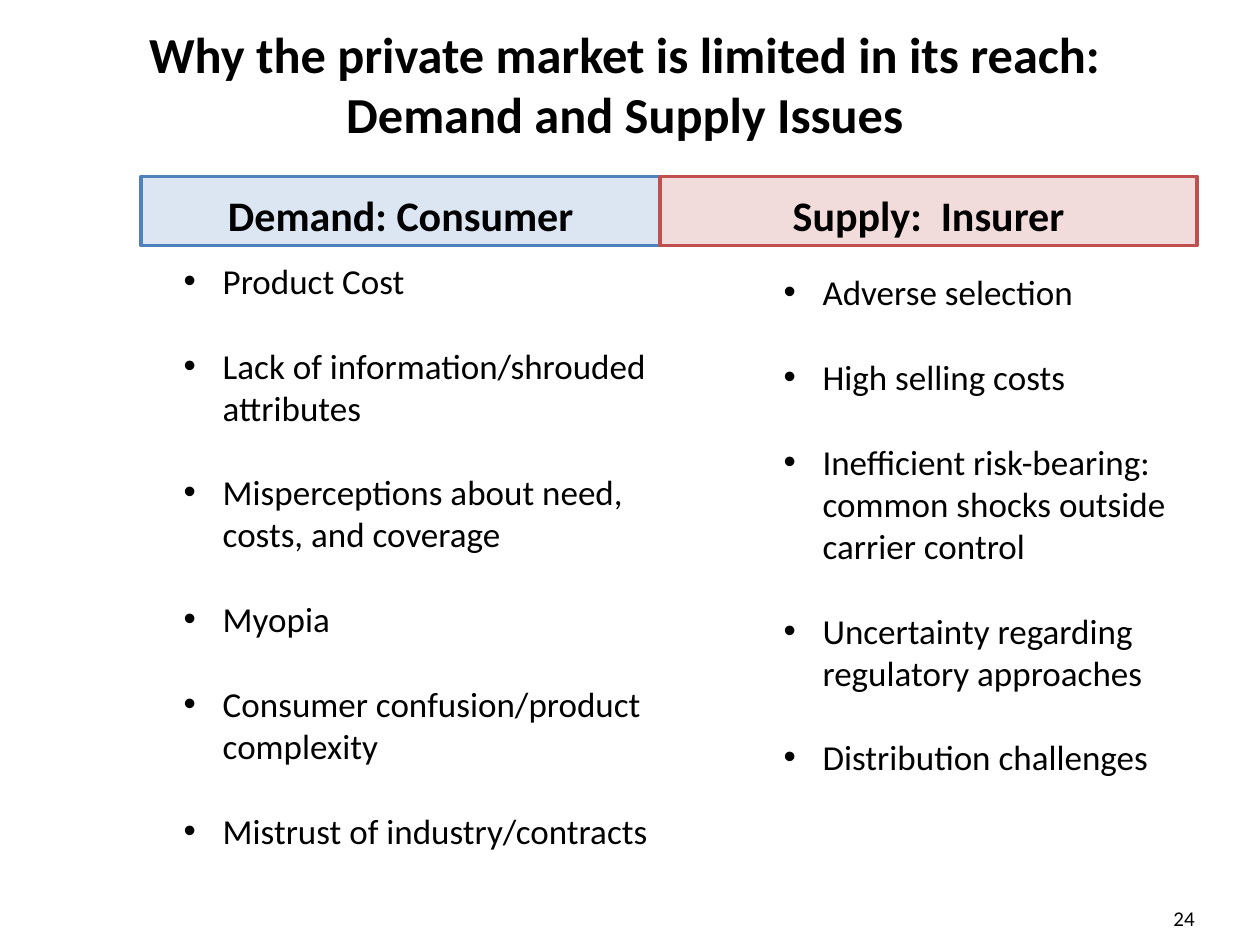
"""Build a slide comparing demand and supply limits of the private insurance market."""
from lxml.etree import SubElement
from pptx import Presentation
from pptx.dml.color import RGBColor
from pptx.enum.shapes import MSO_SHAPE
from pptx.enum.text import MSO_ANCHOR, PP_ALIGN
from pptx.oxml.ns import qn
from pptx.util import Inches, Pt

BLACK = RGBColor(0x00, 0x00, 0x00)
PALE_BLUE = RGBColor(0xDC, 0xE6, 0xF2)
BLUE = RGBColor(0x4F, 0x81, 0xBD)
PALE_RED = RGBColor(0xF2, 0xDC, 0xDB)
RED = RGBColor(0xC0, 0x50, 0x4D)

presentation = Presentation()
presentation.slide_width = Inches(10)
presentation.slide_height = Inches(7.5)
COLUMN = presentation.slide_width / 100
ROW = presentation.slide_height / 100
slide = presentation.slides.add_slide(presentation.slide_layouts[6])


def grid(left, top, width, height):
    return [round(n) for n in (left * COLUMN, top * ROW, width * COLUMN, height * ROW)]


def write(shape, lines, size, align, anchor, bold=False, bulleted=False):
    frame = shape.text_frame
    frame.word_wrap = True
    frame.vertical_anchor = anchor
    frame.text = "\n".join(lines)
    for index, paragraph in enumerate(frame.paragraphs):
        if bulleted:
            properties = paragraph._p.get_or_add_pPr()
            properties.set("marL", str(Inches(0.81)))
            properties.set("indent", str(Inches(-0.31)))
            SubElement(properties, qn("a:buFont"), typeface="Arial")
            SubElement(properties, qn("a:buChar"), char="•")
            if index:
                paragraph.space_before = Pt(size * 1.22)
        paragraph.alignment = align
        paragraph.font.name = "Calibri"
        paragraph.font.size = Pt(size)
        paragraph.font.bold = bold
        paragraph.font.color.rgb = BLACK


title = slide.shapes.add_textbox(*grid(4.2, 2.27, 90.8, 13.07))
write(title, ["Why the private market is limited in its reach: Demand and Supply Issues"],
      28.8, PP_ALIGN.CENTER, MSO_ANCHOR.MIDDLE, bold=True)

sides = [
    ("Demand: Consumer", (11.2, 41.2), PALE_BLUE, BLUE, (8.6, 26.8, 45.4, 67.6), [
        "Product Cost",
        "Lack of information/shrouded attributes",
        "Misperceptions about need, costs, and coverage",
        "Myopia",
        "Consumer confusion/product complexity",
        "Mistrust of industry/contracts",
    ]),
    ("Supply:  Insurer", (52.4, 42.6), PALE_RED, RED, (56.2, 28, 38.8, 61.33), [
        "Adverse selection",
        "High selling costs",
        "Inefficient risk-bearing: common shocks outside carrier control",
        "Uncertainty regarding regulatory approaches",
        "Distribution challenges",
    ]),
]
for heading, (left, width), fill, outline, issues_area, issues in sides:
    header = slide.shapes.add_shape(MSO_SHAPE.RECTANGLE, *grid(left, 18.67, width, 7.33))
    header.shadow.inherit = False
    header.fill.solid()
    header.fill.fore_color.rgb = fill
    header.line.color.rgb = outline
    header.line.width = Pt(2)
    write(header, [heading], 24, PP_ALIGN.CENTER, MSO_ANCHOR.BOTTOM, bold=True)

    issue_list = slide.shapes.add_textbox(*grid(*issues_area))
    write(issue_list, issues, 20, PP_ALIGN.LEFT, MSO_ANCHOR.TOP, bulleted=True)

page_number = slide.shapes.add_textbox(*grid(72.5, 94.53, 23.3, 5.33))
write(page_number, ["24"], 12, PP_ALIGN.RIGHT, MSO_ANCHOR.MIDDLE)

presentation.save("out.pptx")
